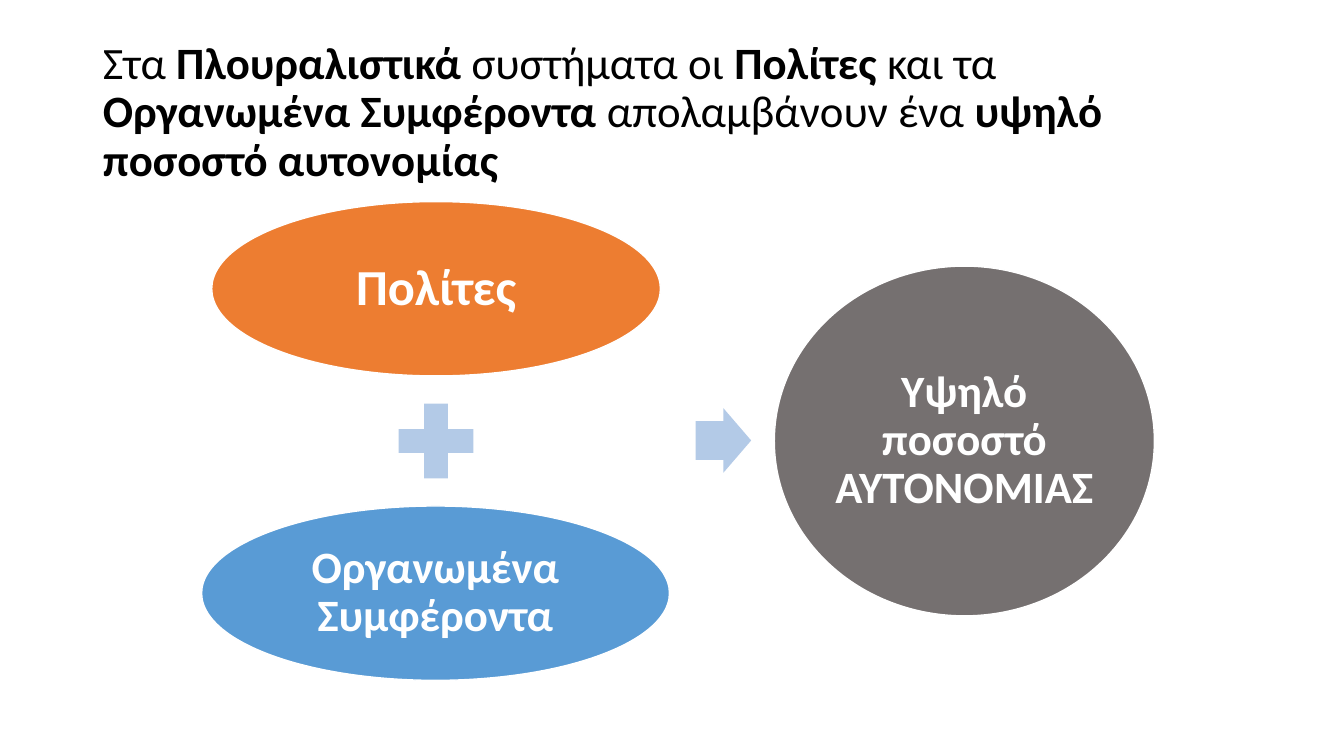
from dataclasses import dataclass

from pptx import Presentation
from pptx.dml.color import RGBColor
from pptx.enum.shapes import MSO_SHAPE
from pptx.enum.text import MSO_ANCHOR, MSO_AUTO_SIZE, PP_ALIGN
from pptx.util import Emu, Pt

OVAL = MSO_SHAPE.OVAL
PLUS = MSO_SHAPE.MATH_PLUS
ARROW = MSO_SHAPE.RIGHT_ARROW
MIDDLE = MSO_ANCHOR.MIDDLE
NO_FIT = MSO_AUTO_SIZE.NONE
LEFT = PP_ALIGN.LEFT
CENTER = PP_ALIGN.CENTER

EMU_PER_PX = 9144
WHITE, BLACK = "FFFFFF", "000000"
ORANGE, BLUE, GRAY, PALE = "ED7D31", "599BD5", "757070", "B3CAE7"


@dataclass(frozen=True)
class Box:
    x: int
    y: int
    w: int
    h: int


@dataclass(frozen=True)
class Run:
    text: str
    bold: bool = False


@dataclass(frozen=True)
class Ellipse:
    box: Box
    fill: str
    text: str
    size: int
    inset: int


@dataclass(frozen=True)
class Sign:
    kind: MSO_SHAPE
    box: Box
    adjustments: tuple[float, ...]


TITLE_BOX = Box(92, 40, 1150, 145)
TITLE_RUNS = (
    Run("Στα "),
    Run("Πλουραλιστικά ", True),
    Run("συστήματα οι "),
    Run("Πολίτες ", True),
    Run("και τα "),
    Run("Οργανωμένα Συμφέροντα", True),
    Run(" απολαμβάνουν ένα "),
    Run("υψηλό ποσοστό αυτονομίας", True),
)
ELLIPSES = (
    Ellipse(Box(210, 200, 445, 173), ORANGE, "Πολίτες", 36, 5),
    Ellipse(Box(200, 502, 464, 173), BLUE, "Οργανωμένα Συμφέροντα", 32, 4),
    Ellipse(Box(768, 264, 377, 347), GRAY, "Υψηλό ποσοστό ΑΥΤΟΝΟΜΙΑΣ", 32, 4),
)
SIGNS = (
    Sign(PLUS, Box(382, 387, 101, 101), (0.235,)),
    Sign(ARROW, Box(690, 405, 55, 64), (0.6, 0.5)),
)


def px(n: int) -> Emu:
    return Emu(n * EMU_PER_PX)


def rgb(color: str) -> RGBColor:
    return RGBColor.from_string(color)


def set_attrs(obj, values: dict) -> None:
    for name, value in values.items():
        setattr(obj, name, value)


def write(tf, runs: tuple[Run, ...], size: int, color: str, align, inset_x: int, inset_y: int) -> None:
    set_attrs(tf, {
        "word_wrap": True, "auto_size": NO_FIT, "vertical_anchor": MIDDLE,
        "margin_left": px(inset_x), "margin_right": px(inset_x),
        "margin_top": px(inset_y), "margin_bottom": px(inset_y),
    })
    p = tf.paragraphs[0]
    set_attrs(p, {"alignment": align, "line_spacing": 0.9, "space_before": Pt(0)})
    for run in runs:
        r = p.add_run()
        r.text = run.text
        set_attrs(r.font, {"name": "Calibri", "size": Pt(size), "bold": run.bold})
        r.font.color.rgb = rgb(color)


def add_filled(s, kind: MSO_SHAPE, box: Box, color: str):
    sp = s.shapes.add_shape(kind, px(box.x), px(box.y), px(box.w), px(box.h))
    sp.shadow.inherit = False
    sp.fill.solid()
    sp.fill.fore_color.rgb = rgb(color)
    return sp


def add_title(s) -> None:
    sp = s.shapes.title
    set_attrs(sp, {
        "left": px(TITLE_BOX.x), "top": px(TITLE_BOX.y),
        "width": px(TITLE_BOX.w), "height": px(TITLE_BOX.h),
    })
    write(sp.text_frame, TITLE_RUNS, 32, BLACK, LEFT, 10, 5)


def add_ellipse(s, item: Ellipse) -> None:
    sp = add_filled(s, OVAL, item.box, item.fill)
    sp.line.color.rgb = rgb(WHITE)
    sp.line.width = Pt(1)
    write(sp.text_frame, (Run(item.text, True),), item.size, WHITE, CENTER, item.inset, item.inset)


def add_sign(s, item: Sign) -> None:
    sp = add_filled(s, item.kind, item.box, PALE)
    sp.line.fill.background()
    for i, value in enumerate(item.adjustments):
        sp.adjustments[i] = value


def main() -> None:
    prs = Presentation()
    set_attrs(prs, {"slide_width": px(1333), "slide_height": px(750)})
    s = prs.slides.add_slide(prs.slide_layouts.get_by_name("Title Only"))
    add_title(s)
    for ellipse in ELLIPSES:
        add_ellipse(s, ellipse)
    for sign in SIGNS:
        add_sign(s, sign)
    prs.save("out.pptx")


if __name__ == "__main__":
    main()
